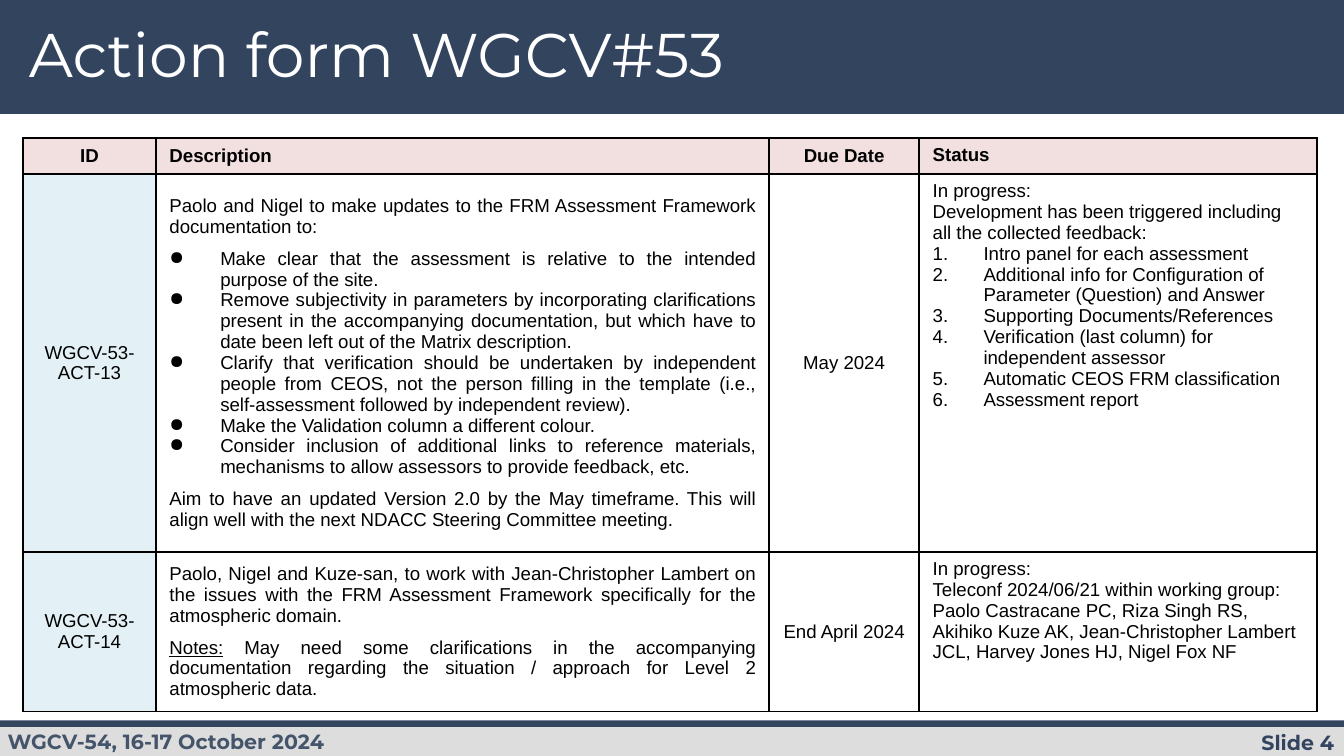
from pptx import Presentation
from pptx.dml.color import RGBColor
from pptx.enum.shapes import MSO_SHAPE as Shape
from pptx.enum.text import MSO_ANCHOR as Anchor, PP_ALIGN as Align
from pptx.oxml import parse_xml
from pptx.oxml.ns import nsdecls
from pptx.util import Pt

COLORS = {"navy": "33445F", "slate": "44546A", "grey": "DDDDDD", "white": "FFFFFF",
          "black": "000000", "pink": "F2DFE0", "blue": "E3F1F6"}

# Content: a cell is a list of (text, list kind, space before)
TITLE = "Action form WGCV#53"
EVENT = "WGCV-54, 16-17 October 2024"
SLIDE_NUMBER = "Slide 4"
NOTES_LABEL = "Notes:"

HEADINGS = ["ID", "Description", "Due Date", "Status"]
UPDATES = [
    "Make clear that the assessment is relative to the intended purpose of the site.",
    "Remove subjectivity in parameters by incorporating clarifications present in the "
    "accompanying documentation, but which have to date been left out of the Matrix description.",
    "Clarify that verification should be undertaken by independent people from CEOS, not the "
    "person filling in the template (i.e., self-assessment followed by independent review).",
    "Make the Validation column a different colour.",
    "Consider inclusion of additional links to reference materials, mechanisms to allow "
    "assessors to provide feedback, etc.",
]
DEVELOPMENTS = [
    "Intro panel for each assessment",
    "Additional info for Configuration of Parameter (Question) and Answer",
    "Supporting Documents/References",
    "Verification (last column) for independent assessor",
    "Automatic CEOS FRM classification",
    "Assessment report",
]
ACTIONS = [
    [
        [("WGCV-53-ACT-13", None, 0)],
        [("Paolo and Nigel to make updates to the FRM Assessment Framework documentation to:",
          None, 0)]
        + [(update, "bullet", 0 if i else 6) for i, update in enumerate(UPDATES)]
        + [("Aim to have an updated Version 2.0 by the May timeframe. This will align well with "
            "the next NDACC Steering Committee meeting.", None, 6)],
        [("May 2024", None, 0)],
        [("In progress:", None, 0),
         ("Development has been triggered including all the collected feedback:", None, 0)]
        + [(development, "number", 0) for development in DEVELOPMENTS],
    ],
    [
        [("WGCV-53-ACT-14", None, 0)],
        [("Paolo, Nigel and Kuze-san, to work with Jean-Christopher Lambert on the issues with "
          "the FRM Assessment Framework specifically for the atmospheric domain.", None, 0),
         (NOTES_LABEL + " May need some clarifications in the accompanying documentation "
          "regarding the situation / approach for Level 2 atmospheric data.", None, 6)],
        [("End April 2024", None, 0)],
        [("In progress:", None, 0),
         ("Teleconf 2024/06/21 within working group: Paolo Castracane PC, Riza Singh RS, "
          "Akihiko Kuze AK, Jean-Christopher Lambert JCL, Harvey Jones HJ, Nigel Fox NF", None, 0)],
    ],
]

# Layout in points
WIDTH, HEIGHT = 720, 405
TABLE_LEFT, TABLE_TOP = 12.3, 74
COLUMN_WIDTHS = [71.3, 328.3, 80.6, 213.1]
ROW_HEIGHTS = [18.3, 202.5, 80.3]
COLUMN_ALIGNS = [Align.CENTER, Align.JUSTIFY, Align.CENTER, Align.LEFT]
LIST_INDENT = 27.2
MARKERS = {"bullet": '<a:buChar {} char="●"/>', "number": '<a:buAutoNum {} type="arabicPeriod"/>'}


def color(name):
    return RGBColor.from_string(COLORS[name])


def style(font, face, size, color_name, bold=False):
    font.name, font.size, font.bold = face, Pt(size), bold
    font.color.rgb = color(color_name)


def add_band(slide, top, height, fill):
    band = slide.shapes.add_shape(Shape.RECTANGLE, 0, Pt(top), Pt(WIDTH), Pt(height))
    band.shadow.inherit = False
    band.fill.solid()
    band.fill.fore_color.rgb = color(fill)
    band.line.fill.background()


def add_label(slide, text, box, insets, size, color_name, bold=False, align=Align.LEFT, spacing=1):
    frame = slide.shapes.add_textbox(*map(Pt, box)).text_frame
    frame.word_wrap = True
    frame.margin_left = frame.margin_right = Pt(insets[0])
    frame.margin_top = frame.margin_bottom = Pt(insets[1])
    frame.text = text
    paragraph = frame.paragraphs[0]
    paragraph.alignment, paragraph.line_spacing = align, spacing
    style(paragraph.runs[0].font, "Montserrat", size, color_name, bold)


def add_marker(paragraph, kind):
    properties = paragraph._p.get_or_add_pPr()
    properties.set("marL", str(Pt(LIST_INDENT)))
    properties.set("indent", str(-Pt(LIST_INDENT)))
    properties.append(parse_xml(
        f'<a:buClr {nsdecls("a")}><a:srgbClr val="{COLORS["black"]}"/></a:buClr>'))
    properties.append(parse_xml(MARKERS[kind].format(nsdecls("a"))))


def fill_cell(cell, content, align, fill, anchor, bold=False):
    # Borders come before the fill
    for side in "LRTB":
        cell._tc.get_or_add_tcPr().append(parse_xml(
            f'<a:ln{side} {nsdecls("a")} w="{Pt(1)}"><a:solidFill>'
            f'<a:srgbClr val="{COLORS["black"]}"/></a:solidFill></a:ln{side}>'))
    cell.fill.solid()
    cell.fill.fore_color.rgb = color(fill)
    cell.vertical_anchor = anchor
    cell.margin_left = cell.margin_right = Pt(7.2)
    cell.margin_top = cell.margin_bottom = Pt(3.6)
    frame = cell.text_frame
    frame.text = "\n".join(text for text, _, _ in content)
    for paragraph, (text, kind, space) in zip(frame.paragraphs, content):
        paragraph.alignment = align
        if space:
            paragraph.space_before = Pt(space)
        if kind:
            add_marker(paragraph, kind)
        if text.startswith(NOTES_LABEL):
            paragraph.text = NOTES_LABEL
            paragraph.runs[0].font.underline = True
            paragraph.add_run().text = text[len(NOTES_LABEL):]
        for run in paragraph.runs:
            style(run.font, "Arial", 10, "black", bold)


def add_actions(slide):
    table = slide.shapes.add_table(
        len(ROW_HEIGHTS), len(COLUMN_WIDTHS), Pt(TABLE_LEFT), Pt(TABLE_TOP),
        Pt(sum(COLUMN_WIDTHS)), Pt(sum(ROW_HEIGHTS))).table
    for column, width in zip(table.columns, COLUMN_WIDTHS):
        column.width = Pt(width)
    for row, height in zip(table.rows, ROW_HEIGHTS):
        row.height = Pt(height)
    rows = [[[(heading, None, 0)] for heading in HEADINGS]] + ACTIONS
    for r, row in enumerate(rows):
        for c, content in enumerate(row):
            fill = "pink" if r == 0 else "blue" if c == 0 else "white"
            anchor = Anchor.TOP if HEADINGS[c] == "Status" else Anchor.MIDDLE
            fill_cell(table.cell(r, c), content, COLUMN_ALIGNS[c], fill, anchor, bold=r == 0)


def main():
    deck = Presentation()
    deck.slide_width, deck.slide_height = Pt(WIDTH), Pt(HEIGHT)
    slide = deck.slides.add_slide(deck.slide_layouts[6])

    # Header and footer bands
    add_band(slide, 0, 61, "navy")
    add_band(slide, 388.3, 16.7, "grey")
    add_band(slide, 386, 3.5, "navy")

    # Footer and title text
    add_label(slide, SLIDE_NUMBER, (606, 388.3, 114, 18.5), (5.2, 2.6), 11, "navy",
              bold=True, align=Align.RIGHT)
    add_label(slide, EVENT, (-3, 383.8, 400, 28), (7.2, 7.2), 11, "slate", bold=True)
    add_label(slide, TITLE, (10.3, 10.3, 554, 46), (5.2, 2.6), 33, "white", spacing=0.9)

    add_actions(slide)
    deck.save("out.pptx")


if __name__ == "__main__":
    main()
